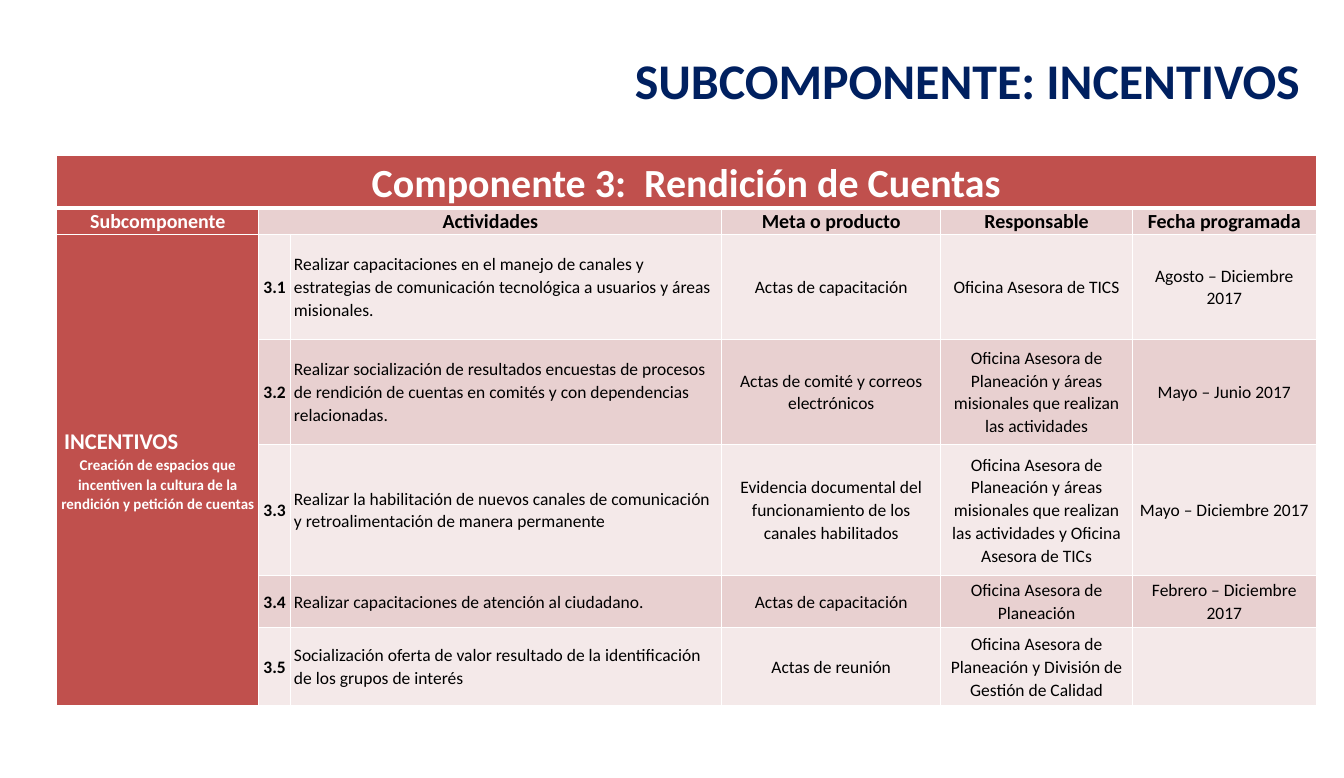
from lxml import etree
from pptx import Presentation
from pptx.dml.color import RGBColor
from pptx.enum.text import MSO_ANCHOR, PP_ALIGN
from pptx.oxml.ns import qn
from pptx.util import Pt

LEFT, CENTER, RIGHT = PP_ALIGN.LEFT, PP_ALIGN.CENTER, PP_ALIGN.RIGHT
MIDDLE = MSO_ANCHOR.MIDDLE
FONT = "Calibri"
WHITE = RGBColor(0xFF, 0xFF, 0xFF)
BLACK = RGBColor(0, 0, 0)
NAVY = RGBColor(0x00, 0x20, 0x60)
RED = RGBColor(0xC0, 0x50, 0x4D)
PINK = RGBColor(0xE8, 0xD0, 0xD0)
PALE = RGBColor(0xF4, 0xE9, 0xE9)

# Content
TITLE = "SUBCOMPONENTE: INCENTIVOS"
COMPONENT = "Componente 3:  Rendición de Cuentas"
# The activities heading spans the number and text columns
HEADINGS = ["Subcomponente", "Actividades", "", "Meta o producto", "Responsable",
            "Fecha programada"]
GROUP = "INCENTIVOS"
GROUP_PURPOSE = "Creación de espacios que incentiven la cultura de la rendición y petición de cuentas"
ACTIVITIES = [
    ("3.1",
     "Realizar capacitaciones en el manejo de canales y estrategias de comunicación "
     "tecnológica a usuarios y áreas misionales.",
     "Actas de capacitación", "Oficina Asesora de TICS", "Agosto – Diciembre 2017"),
    ("3.2",
     "Realizar socialización de resultados encuestas de procesos de rendición de cuentas "
     "en comités y con dependencias relacionadas.",
     "Actas de comité y correos electrónicos",
     "Oficina Asesora de Planeación y áreas misionales que realizan las actividades",
     "Mayo – Junio 2017"),
    ("3.3",
     "Realizar la habilitación de nuevos canales de comunicación y retroalimentación "
     "de manera permanente",
     "Evidencia documental del funcionamiento de los canales habilitados",
     "Oficina Asesora de Planeación y áreas misionales que realizan las actividades "
     "y Oficina Asesora de TICs",
     "Mayo – Diciembre 2017"),
    ("3.4", "Realizar capacitaciones de atención al ciudadano.",
     "Actas de capacitación", "Oficina Asesora de Planeación", "Febrero – Diciembre 2017"),
    ("3.5",
     "Socialización oferta de valor resultado de la identificación de los grupos de interés",
     "Actas de reunión",
     "Oficina Asesora de Planeación y División de Gestión de Calidad", ""),
]

# Layout in points
SLIDE_WIDTH, SLIDE_HEIGHT = 1077, 623.5
TABLE_LEFT, TABLE_TOP = 45.5, 124.8
COLUMN_WIDTHS = [162, 25.2, 345.6, 175.7, 153.4, 147.5]
ROW_HEIGHTS = [41, 21, 84.2, 84.2, 105.1, 41.8, 62.6]


def add_text(paragraph, text, size, color, bold=False, alignment=CENTER):
    paragraph.alignment = alignment
    run = paragraph.add_run()
    run.text = text
    run.font.name = FONT
    run.font.size = Pt(size)
    run.font.bold = bold
    run.font.color.rgb = color


def fill_cell(cell, text, size, color, fill, bold=False, alignment=CENTER):
    if text:
        paragraph = cell.text_frame.paragraphs[0]
        paragraph.line_spacing = 1.07
        add_text(paragraph, text, size, color, bold, alignment)
    cell.fill.solid()
    cell.fill.fore_color.rgb = fill


def format_cell(cell, top=1, bottom=1):
    cell.vertical_anchor = MIDDLE
    cell.margin_left = cell.margin_right = Pt(2.9)
    cell.margin_top = cell.margin_bottom = 0
    properties = cell._tc.get_or_add_tcPr()
    for side, width in (("lnL", 1), ("lnR", 1), ("lnT", top), ("lnB", bottom)):
        line = etree.SubElement(properties, qn("a:" + side), w=str(Pt(width)))
        solid = etree.SubElement(line, qn("a:solidFill"))
        etree.SubElement(solid, qn("a:srgbClr"), val=str(WHITE))


presentation = Presentation()
presentation.slide_width = Pt(SLIDE_WIDTH)
presentation.slide_height = Pt(SLIDE_HEIGHT)
slide = presentation.slides.add_slide(presentation.slide_layouts[6])

# Table grid
table = slide.shapes.add_table(
    len(ROW_HEIGHTS), len(COLUMN_WIDTHS), Pt(TABLE_LEFT), Pt(TABLE_TOP),
    Pt(sum(COLUMN_WIDTHS)), Pt(sum(ROW_HEIGHTS))).table
table.first_row = table.horz_banding = False
for column, width in zip(table.columns, COLUMN_WIDTHS):
    column.width = Pt(width)
for row_index, height in enumerate(ROW_HEIGHTS):
    table.rows[row_index].height = Pt(height)
    for cell in table.rows[row_index].cells:
        format_cell(cell, top=3 if row_index == 1 else 1, bottom=3 if row_index == 0 else 1)

# Merged areas
table.cell(0, 0).merge(table.cell(0, 5))
table.cell(1, 1).merge(table.cell(1, 2))
table.cell(2, 0).merge(table.cell(6, 0))

# Heading rows
fill_cell(table.cell(0, 0), COMPONENT, 32, WHITE, RED, bold=True)
for column_index, heading in enumerate(HEADINGS):
    color, fill = (BLACK, PINK) if column_index else (WHITE, RED)
    fill_cell(table.cell(1, column_index), heading, 16, color, fill, bold=True)

# Group cell
group_cell = table.cell(2, 0)
fill_cell(group_cell, GROUP, 18, WHITE, RED, bold=True, alignment=LEFT)
group_cell.text_frame.paragraphs[0]._p.get_or_add_pPr().set("marL", str(Pt(3)))
purpose = group_cell.text_frame.add_paragraph()
purpose.line_spacing = 1.07
add_text(purpose, GROUP_PURPOSE, 12, WHITE, bold=True)

# Activity rows
for row_index, activity in enumerate(ACTIVITIES, start=2):
    fill = PINK if row_index % 2 else PALE
    for column_index, text in enumerate(activity, start=1):
        fill_cell(table.cell(row_index, column_index), text, 14, BLACK, fill,
                  bold=column_index == 1, alignment=LEFT if column_index == 2 else CENTER)

# Slide title
title_frame = slide.shapes.add_textbox(Pt(294.5), Pt(39.6), Pt(782.5), Pt(48.2)).text_frame
title_frame.word_wrap = True
title_frame.margin_left, title_frame.margin_right = Pt(14.4), Pt(35.3)
title_frame.margin_top = title_frame.margin_bottom = 0
add_text(title_frame.paragraphs[0], TITLE, 40, NAVY, bold=True, alignment=RIGHT)

presentation.save("out.pptx")
